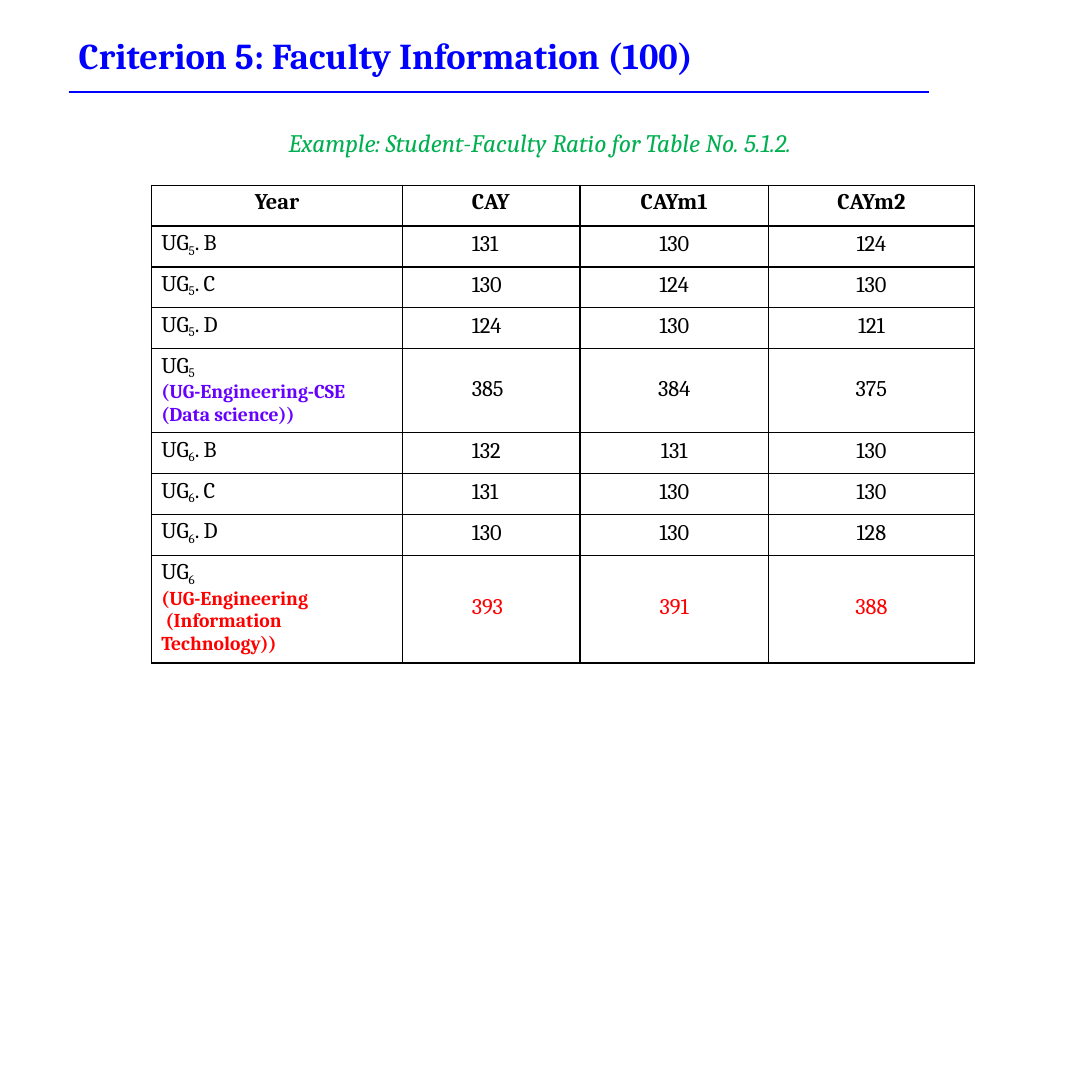
import pptx
import pptx.util
import pptx.dml.color
import pptx.enum.shapes
import pptx.enum.text
import pptx.oxml
import pptx.oxml.ns
import lxml.etree

Pt = pptx.util.Pt
ALIGN = pptx.enum.text.PP_ALIGN
ANCHOR = pptx.enum.text.MSO_ANCHOR
qn = pptx.oxml.ns.qn

FONT = "Cambria"
COLORS = {
    "title": "0000FF",
    "caption": "00AF50",
    "text": "000000",
    "data_science": "6600FF",
    "it": "FF0000",
}
COL_WIDTHS = [179.25, 126.75, 134.75, 147]
ROW_HEIGHT = 29.25
HEADER = ["Year", "CAY", "CAYm1", "CAYm2"]
INDENTS = [7, 49.5]
GROUPS = [
    {
        "number": "5",
        "years": [("B", [131, 130, 124]), ("C", [130, 124, 130]), ("D", [124, 130, 121])],
        "program": "(UG-Engineering-CSE\v(Data science))",
        "color": "data_science",
        "totals": [385, 384, 375],
        "total_color": "text",
        "height": 60,
    },
    {
        "number": "6",
        "years": [("B", [132, 131, 130]), ("C", [131, 130, 130]), ("D", [130, 130, 128])],
        "program": "(UG-Engineering\v (Information\vTechnology))",
        "color": "it",
        "totals": [393, 391, 388],
        "total_color": "it",
        "height": 76.75,
    },
]


def rgb(name):
    return pptx.dml.color.RGBColor.from_string(COLORS[name])


def style(p, size, color, bold=False, italic=False, align=ALIGN.LEFT):
    p.alignment = align
    p.font.name = FONT
    p.font.size = Pt(size)
    p.font.bold = bold
    p.font.italic = italic
    p.font.color.rgb = rgb(color)


def fill_text_box(sp, box, text, size, color, **font):
    sp.left, sp.top, sp.width, sp.height = map(Pt, box)
    tf = sp.text_frame
    tf.word_wrap = True
    tf.auto_size = pptx.enum.text.MSO_AUTO_SIZE.NONE
    tf.vertical_anchor = ANCHOR.TOP
    tf.margin_left = tf.margin_top = Pt(1)
    tf.margin_right = tf.margin_bottom = 0
    tf.text = text
    style(tf.paragraphs[0], size, color, **font)


def add_rule(slide, x1, x2, y):
    line = slide.shapes.add_connector(
        pptx.enum.shapes.MSO_CONNECTOR.STRAIGHT, Pt(x1), Pt(y), Pt(x2), Pt(y))
    line.line.color.rgb = rgb("title")
    line.line.width = Pt(1.25)
    lxml.etree.SubElement(line._element.spPr, qn("a:effectLst"))


def format_cell(cell, anchor=ANCHOR.TOP, indent=0, top=3, bottom=0):
    tcPr = cell._tc.get_or_add_tcPr()
    for side in ("a:lnL", "a:lnR", "a:lnT", "a:lnB"):
        ln = lxml.etree.SubElement(tcPr, qn(side), w=str(Pt(1)))
        solid = lxml.etree.SubElement(ln, qn("a:solidFill"))
        lxml.etree.SubElement(solid, qn("a:srgbClr"), val=COLORS["text"])
    cell.fill.background()
    cell.vertical_anchor = anchor
    cell.margin_left = Pt(indent)
    cell.margin_right = 0
    cell.margin_top = Pt(top)
    cell.margin_bottom = Pt(bottom)


def fill_header(cells):
    for i, (cell, text) in enumerate(zip(cells, HEADER)):
        format_cell(cell, indent=INDENTS[1] if i == 1 else 0)
        cell.text = text
        style(cell.text_frame.paragraphs[0], 16, "text", bold=True,
              align=ALIGN.LEFT if i == 1 else ALIGN.CENTER)


def fill_label(cell, number, suffix=""):
    format_cell(cell, indent=INDENTS[0])
    p = cell.text_frame.paragraphs[0]
    style(p, 16, "text")
    p.add_run().text = "UG"
    r = p.add_run()
    r.text = number
    r._r.get_or_add_rPr().set("baseline", "-21000")
    if suffix:
        p.add_run().text = suffix


def fill_values(cells, values, color="text"):
    for i, (cell, value) in enumerate(zip(cells, values)):
        format_cell(cell, ANCHOR.MIDDLE, 0 if i else INDENTS[1], top=0, bottom=3)
        cell.text = str(value)
        style(cell.text_frame.paragraphs[0], 16, color,
              align=ALIGN.CENTER if i else ALIGN.LEFT)


def add_ratio_table(slide, left, top):
    heights = [ROW_HEIGHT]
    for group in GROUPS:
        heights += [ROW_HEIGHT] * len(group["years"]) + [group["height"]]
    table = slide.shapes.add_table(
        len(heights), len(COL_WIDTHS), Pt(left), Pt(top),
        Pt(sum(COL_WIDTHS)), Pt(sum(heights))).table
    table.first_row = table.horz_banding = False
    for col, width in zip(table.columns, COL_WIDTHS):
        col.width = Pt(width)
    for row, height in zip(table.rows, heights):
        row.height = Pt(height)

    rows = iter([list(row.cells) for row in table.rows])
    fill_header(next(rows))
    for group in GROUPS:
        for year, values in group["years"]:
            label, *cells = next(rows)
            fill_label(label, group["number"], ". " + year)
            fill_values(cells, values)
        label, *cells = next(rows)
        fill_label(label, group["number"])
        p = label.text_frame.add_paragraph()
        p.text = group["program"]
        style(p, 14, group["color"], bold=True)
        fill_values(cells, group["totals"], group["total_color"])


def main():
    prs = pptx.Presentation()
    prs.slide_width = prs.slide_height = Pt(780)
    slide = prs.slides.add_slide(prs.slide_layouts[5])
    fill_text_box(slide.shapes.title, (55.25, 22.5, 455, 33),
                  "Criterion 5: Faculty Information (100)", 26, "title", bold=True)
    add_rule(slide, 49, 663.75, 65.5)
    caption = slide.shapes.add_textbox(0, 0, 0, 0)
    fill_text_box(caption, (205.25, 90, 381, 24),
                  "Example: Student-Faculty Ratio for Table No. 5.1.2.",
                  18, "caption", italic=True)
    add_ratio_table(slide, 108.25, 132.25)
    prs.save("out.pptx")


if __name__ == "__main__":
    main()
